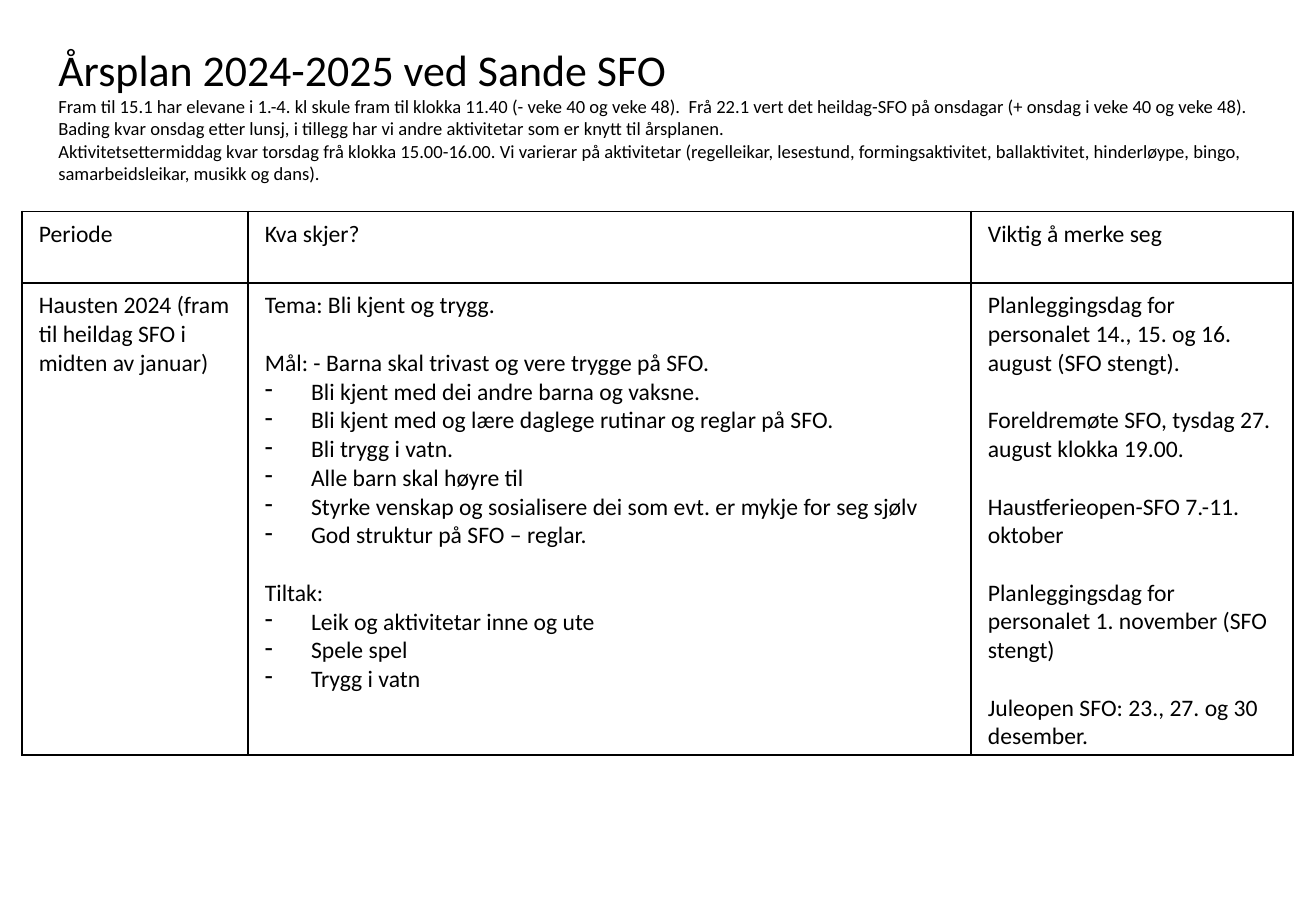
from lxml import etree
from pptx import Presentation
from pptx.dml.color import RGBColor
from pptx.enum import text
from pptx.oxml import ns
from pptx.util import Inches, Pt

BLACK = RGBColor(0, 0, 0)
FONT = "Calibri"
BODY_SIZE = 14
BLOCK_GAP = 17
BULLET_INDENT = Inches(0.38)

TITLE = "Årsplan 2024-2025 ved Sande SFO"
INTRO = [
    "Fram til 15.1 har elevane i 1.-4. kl skule fram til klokka 11.40 (- veke 40 og veke 48).  "
    "Frå 22.1 vert det heildag-SFO på onsdagar (+ onsdag i veke 40 og veke 48).",
    "Bading kvar onsdag etter lunsj, i tillegg har vi andre aktivitetar som er knytt til årsplanen.",
    "Aktivitetsettermiddag kvar torsdag frå klokka 15.00-16.00. Vi varierar på aktivitetar "
    "(regelleikar, lesestund, formingsaktivitet, ballaktivitet, hinderløype, bingo, "
    "samarbeidsleikar, musikk og dans).",
]
HEADINGS = ["Periode", "Kva skjer?", "Viktig å merke seg"]
PERIOD = [("Hausten 2024 (fram til heildag SFO i midten av januar)", [])]
PLAN = [
    ("Tema: Bli kjent og trygg.", []),
    ("Mål: - Barna skal trivast og vere trygge på SFO.", [
        "Bli kjent med dei andre barna og vaksne.",
        "Bli kjent med og lære daglege rutinar og reglar på SFO.",
        "Bli trygg i vatn.",
        "Alle barn skal høyre til",
        "Styrke venskap og sosialisere dei som evt. er mykje for seg sjølv",
        "God struktur på SFO – reglar.",
    ]),
    ("Tiltak:", ["Leik og aktivitetar inne og ute", "Spele spel", "Trygg i vatn"]),
]
NOTICES = [(notice, []) for notice in (
    "Planleggingsdag for personalet 14., 15. og 16. august (SFO stengt).",
    "Foreldremøte SFO, tysdag 27. august klokka 19.00.",
    "Haustferieopen-SFO 7.-11. oktober",
    "Planleggingsdag for personalet 1. november (SFO stengt)",
    "Juleopen SFO: 23., 27. og 30 desember.",
)]
ROWS = [[[(heading, [])] for heading in HEADINGS], [PERIOD, PLAN, NOTICES]]
COLUMN_WIDTHS = [1.86, 5.95, 2.65]
ROW_HEIGHTS = [0.59, 3.87]


def add_line(frame, words, size, first):
    """Write one paragraph into a text frame and return it."""
    para = frame.paragraphs[0] if first else frame.add_paragraph()
    para.text = words
    para.font.name, para.font.size = FONT, Pt(size)
    para.font.color.rgb = BLACK
    return para


def add_bullet(para):
    """Give a paragraph a dash with a hanging indent."""
    props = para._p.get_or_add_pPr()
    props.set("marL", str(BULLET_INDENT))
    props.set("indent", str(-BULLET_INDENT))
    bullet = etree.Element(ns.qn("a:buChar"), char="-")
    props.find(ns.qn("a:defRPr")).addprevious(bullet)


def add_borders(cell):
    """Draw a thin solid line on every side of a cell."""
    props = cell._tc.get_or_add_tcPr()
    for side in ("lnL", "lnR", "lnT", "lnB"):
        line = etree.SubElement(props, ns.qn(f"a:{side}"), w=str(Pt(1)))
        fill = etree.SubElement(line, ns.qn("a:solidFill"))
        etree.SubElement(fill, ns.qn("a:srgbClr"), val=str(BLACK))


def fill_cell(cell, blocks):
    """Format a cell and write its blocks of heading and bullets."""
    cell.margin_left = cell.margin_right = Inches(0.14)
    cell.margin_top = cell.margin_bottom = Inches(0.07)
    add_borders(cell)
    cell.fill.background()
    for index, (heading, bullets) in enumerate(blocks):
        para = add_line(cell.text_frame, heading, BODY_SIZE, index == 0)
        if index:
            para.space_before = Pt(BLOCK_GAP)
        for bullet in bullets:
            add_bullet(add_line(cell.text_frame, bullet, BODY_SIZE, False))


def add_heading(page):
    """Place the title with the introduction under it."""
    box = page.shapes.title
    box.left, box.top = Inches(0.38), Inches(0.3)
    box.width, box.height = Inches(10.27), Inches(1.28)
    frame = box.text_frame
    frame.word_wrap = True
    frame.auto_size = text.MSO_AUTO_SIZE.SHAPE_TO_FIT_TEXT
    frame.vertical_anchor = text.MSO_ANCHOR.TOP
    for index, words in enumerate([TITLE] + INTRO):
        para = add_line(frame, words, 11 if index else 26, index == 0)
        para.alignment = text.PP_ALIGN.LEFT


def add_plan(page):
    """Place the table of periods, plans and notices."""
    table = page.shapes.add_table(
        len(ROWS), len(COLUMN_WIDTHS), Inches(0.18), Inches(1.74),
        Inches(sum(COLUMN_WIDTHS)), Inches(sum(ROW_HEIGHTS))).table
    table.first_row = table.horz_banding = False
    for column, width in zip(table.columns, COLUMN_WIDTHS):
        column.width = Inches(width)
    for row, height, contents in zip(table.rows, ROW_HEIGHTS, ROWS):
        row.height = Inches(height)
        for cell, blocks in zip(row.cells, contents):
            fill_cell(cell, blocks)


def main():
    """Build the one-page year plan."""
    deck = Presentation()
    deck.slide_width, deck.slide_height = Inches(10.83), Inches(7.5)
    page = deck.slides.add_slide(deck.slide_layouts[5])
    add_plan(page)
    add_heading(page)
    deck.save("out.pptx")


if __name__ == "__main__":
    main()
